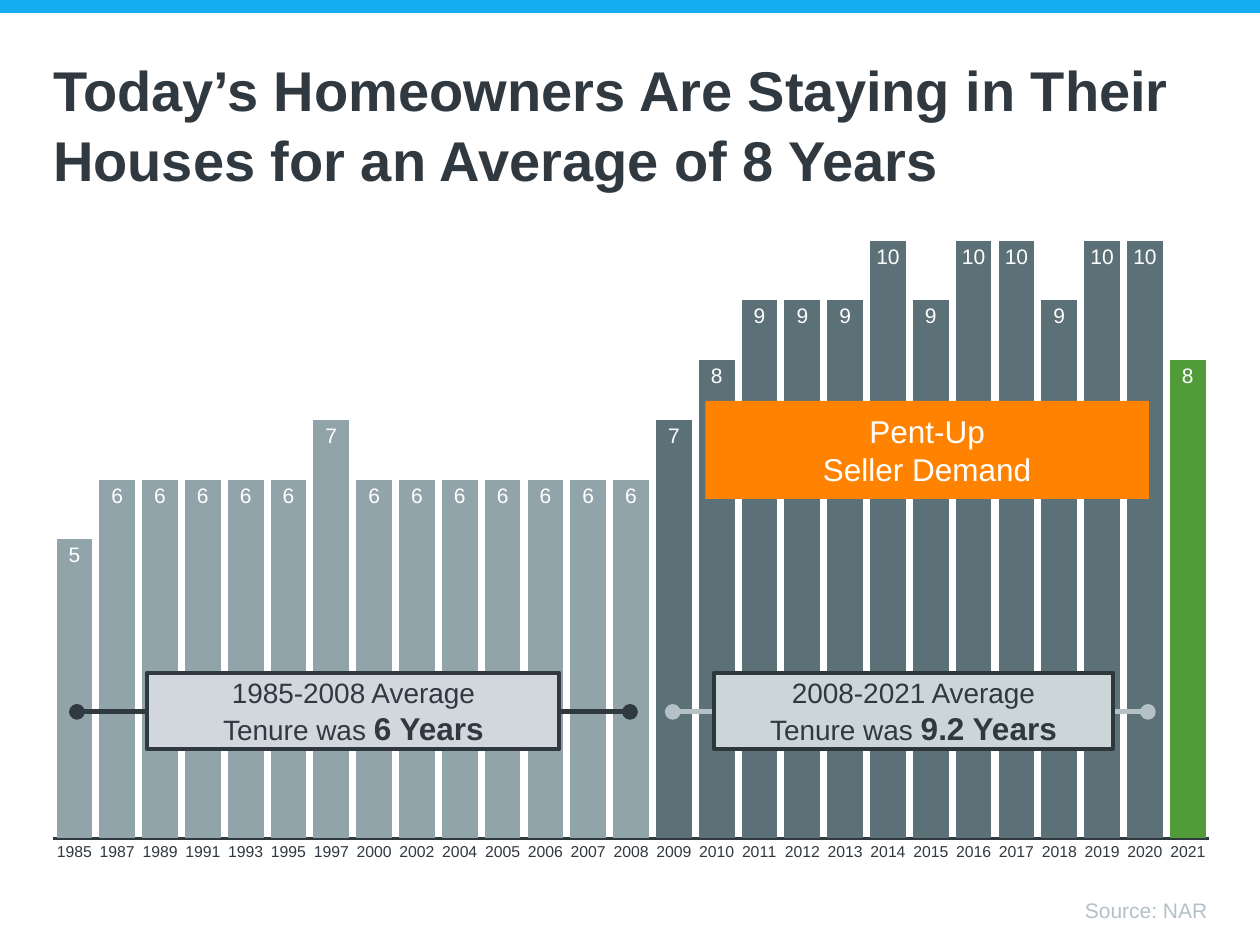
from lxml import etree
from pptx import Presentation
from pptx import util as u
from pptx.chart.data import CategoryChartData
from pptx.dml.color import RGBColor
from pptx.enum import chart as ch, shapes, text
from pptx.oxml import ns

BLUE = RGBColor(0x14, 0xAD, 0xF0)
INK = RGBColor(0x30, 0x38, 0x40)
EDGE = RGBColor(0x2E, 0x38, 0x3B)
SILVER = RGBColor(0xB4, 0xC1, 0xC6)
SLATE = RGBColor(0x5B, 0x70, 0x77)
MIST = RGBColor(0x91, 0xA4, 0xAA)
GREEN = RGBColor(0x51, 0x9C, 0x39)
LILAC = RGBColor(0xD2, 0xD7, 0xDD)
PALE = RGBColor(0xCC, 0xD5, 0xD8)
ORANGE = RGBColor(0xFF, 0x83, 0x00)
WHITE = RGBColor(0xFF, 0xFF, 0xFF)

YEARS = [*range(1985, 1998, 2), 2000, 2002, *range(2004, 2022)]
TENURE = [5] + [6] * 5 + [7] + [6] * 7 + [7, 8, 9, 9, 9, 10, 9, 10, 10, 9, 10, 10, 8]
EARLY_BARS = 14


class Deck:
    font = "Arial"

    def __init__(self, prs):
        self.s = prs.slides.add_slide(prs.slide_layouts[1])

    def style(self, font, size, color, bold=False):
        font.name, font.size, font.bold = self.font, u.Pt(size), bold
        font.color.rgb = color

    def run(self, p, words, size, color, bold=False):
        r = p.add_run()
        r.text = words
        self.style(r.font, size, color, bold)

    def placeholder(self, idx, box, align, inset=0):
        sp = self.s.placeholders[idx]
        sp.left, sp.top, sp.width, sp.height = map(u.Cm, box)
        tf = sp.text_frame
        tf.word_wrap = True
        tf.auto_size = text.MSO_AUTO_SIZE.NONE
        tf.vertical_anchor = text.MSO_ANCHOR.TOP
        tf.margin_left = tf.margin_right = 0
        tf.margin_top = tf.margin_bottom = u.Cm(inset)
        p = tf.paragraphs[0]
        p.alignment = align
        p.space_before = u.Pt(0)
        return p

    def title(self, lines, box):
        p = self.placeholder(0, box, text.PP_ALIGN.LEFT)
        p.line_spacing = 1.04
        for i, line in enumerate(lines):
            if i:
                p.add_line_break()
            self.run(p, line, 32, INK, True)

    def source(self, words, box):
        p = self.placeholder(1, box, text.PP_ALIGN.RIGHT, 0.13)
        pPr = p._p.get_or_add_pPr()
        pPr.set("marL", "0")
        pPr.set("indent", "0")
        etree.SubElement(pPr, ns.qn("a:buNone"))
        p.line_spacing = 0.9
        self.run(p, words, 12, SILVER)

    def box(self, box, fill, lines=(), edge=None):
        sp = self.s.shapes.add_shape(shapes.MSO_SHAPE.RECTANGLE, *map(u.Cm, box))
        sp.shadow.inherit = False
        sp.fill.solid()
        sp.fill.fore_color.rgb = fill
        if edge is None:
            sp.line.fill.background()
        else:
            sp.line.color.rgb = edge
            sp.line.width = u.Pt(2.25)
        tf = sp.text_frame
        tf.word_wrap = True
        tf.vertical_anchor = text.MSO_ANCHOR.MIDDLE
        for i, runs in enumerate(lines):
            p = tf.add_paragraph() if i else tf.paragraphs[0]
            p.alignment = text.PP_ALIGN.CENTER
            for r in runs:
                self.run(p, *r)

    def average(self, box, fill, edge, period, years):
        self.box(box, fill, [
            [(f"{period} Average", 16, INK)],
            [("Tenure was ", 16, INK), (years, 18, INK, True)],
        ], edge)

    def span(self, x1, x2, y, color):
        line = self.s.shapes.add_connector(
            shapes.MSO_CONNECTOR.STRAIGHT, u.Cm(x1), u.Cm(y), u.Cm(x2), u.Cm(y))
        line.line.color.rgb = color
        line.line.width = u.Pt(3)
        ln = line.line._get_or_add_ln()
        for end in ("a:headEnd", "a:tailEnd"):
            etree.SubElement(ln, ns.qn(end), type="oval")
        etree.SubElement(line._element.spPr, ns.qn("a:effectLst"))

    def columns(self, box, plot_box):
        data = CategoryChartData()
        data.categories = [str(year) for year in YEARS]
        data.add_series("Series 1", TENURE)
        chart = self.s.shapes.add_chart(
            ch.XL_CHART_TYPE.COLUMN_CLUSTERED, *map(u.Cm, box), data).chart
        chart.has_legend = chart.has_title = False
        self.style(chart.font, 10, INK)

        axis = chart.category_axis
        axis.major_tick_mark = axis.minor_tick_mark = ch.XL_TICK_MARK.NONE
        axis.format.line.color.rgb = INK
        axis.format.line.width = u.Pt(1.5)
        self.style(axis.tick_labels.font, 9, INK)
        scale = chart.value_axis
        scale.visible = scale.has_major_gridlines = False
        scale.minimum_scale, scale.maximum_scale = 0, 10

        plot = chart.plots[0]
        plot.gap_width = 20
        plot.vary_by_categories = False
        bars = plot.series[0]
        bars.format.fill.solid()
        bars.format.fill.fore_color.rgb = SLATE
        accents = dict.fromkeys(range(EARLY_BARS), MIST)
        accents[len(YEARS) - 1] = GREEN
        for i, color in accents.items():
            fill = bars.points[i].format.fill
            fill.solid()
            fill.fore_color.rgb = color
        labels = bars.data_labels
        labels.show_value = True
        labels.position = ch.XL_LABEL_POSITION.INSIDE_END
        self.style(labels.font, 12, WHITE)
        self.place_plot(chart, plot_box)

    def place_plot(self, chart, plot_box):
        area = chart._chartSpace.chart.plotArea
        for old in area.findall(ns.qn("c:layout")):
            area.remove(old)
        layout = etree.Element(ns.qn("c:layout"))
        area.insert(0, layout)
        manual = etree.SubElement(layout, ns.qn("c:manualLayout"))
        settings = [("layoutTarget", "inner"), ("xMode", "edge"), ("yMode", "edge")]
        for tag, value in settings + list(zip("xywh", plot_box)):
            etree.SubElement(manual, ns.qn(f"c:{tag}"), val=str(value))


def main():
    prs = Presentation()
    prs.slide_width, prs.slide_height = u.Cm(25.4), u.Cm(19.05)
    deck = Deck(prs)
    deck.box((0, 0, 25.4, 0.26), BLUE)
    deck.title(["Today’s Homeowners Are Staying in Their",
                "Houses for an Average of 8 Years"], (1.07, 1.07, 23.29, 0.99))
    deck.source("Source: NAR", (1.07, 18.01, 23.27, 0.61))
    deck.columns((0.61, 4.47, 24.08, 13.21), (0.019, 0.029, 0.968, 0.912))
    deck.span(13.56, 23.14, 14.35, SILVER)
    deck.span(1.55, 12.7, 14.35, INK)
    deck.average((2.97, 13.56, 8.31, 1.55), LILAC, INK, "1985-2008", "6 Years")
    deck.average((14.4, 13.56, 8.03, 1.55), PALE, EDGE, "2008-2021", "9.2 Years")
    deck.box((14.22, 8.08, 8.94, 1.98), ORANGE, [
        [("Pent-Up", 18, WHITE)], [("Seller Demand", 18, WHITE)]])
    prs.save("out.pptx")


if __name__ == "__main__":
    main()
